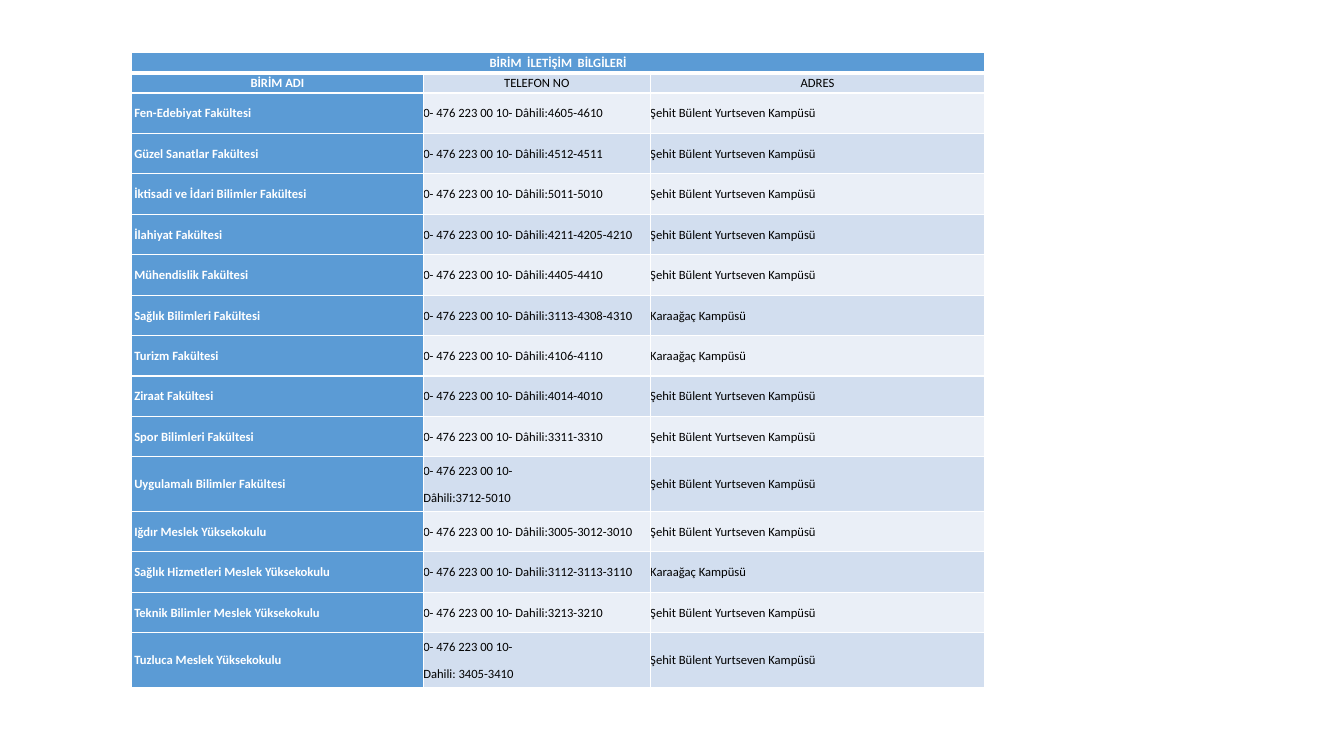
import dataclasses

import lxml.etree
import pptx
import pptx.dml.color
import pptx.enum.text
import pptx.oxml.ns
import pptx.util

Pt = pptx.util.Pt


@dataclasses.dataclass(frozen=True)
class Theme:
    """Colours, font and sizes of the slide."""
    blue: str = "5B9BD5"
    mid: str = "D2DEEF"
    pale: str = "EAEFF7"
    white: str = "FFFFFF"
    black: str = "000000"
    font: str = "Calibri"
    size: float = 9
    thin: float = 1
    thick: float = 3


THEME = Theme()
TITLE = "BİRİM  İLETİŞİM  BİLGİLERİ"
HEADS = ("BİRİM ADI", "TELEFON NO", "ADRES")
PHONE = "0- 476 223 00 10-"
MAIN = "Şehit Bülent Yurtseven Kampüsü"
SIDE = "Karaağaç Kampüsü"
UNITS = (
    ("Fen-Edebiyat Fakültesi", " Dâhili:4605-4610", MAIN),
    ("Güzel Sanatlar Fakültesi", " Dâhili:4512-4511", MAIN),
    ("İktisadi ve İdari Bilimler Fakültesi", " Dâhili:5011-5010", MAIN),
    ("İlahiyat Fakültesi", " Dâhili:4211-4205-4210", MAIN),
    ("Mühendislik Fakültesi", " Dâhili:4405-4410", MAIN),
    ("Sağlık Bilimleri Fakültesi", " Dâhili:3113-4308-4310", SIDE),
    ("Turizm Fakültesi", " Dâhili:4106-4110", SIDE),
    ("Ziraat Fakültesi", " Dâhili:4014-4010", MAIN),
    ("Spor Bilimleri Fakültesi", " Dâhili:3311-3310", MAIN),
    ("Uygulamalı Bilimler Fakültesi", "\nDâhili:3712-5010", MAIN),
    ("Iğdır Meslek Yüksekokulu", " Dâhili:3005-3012-3010", MAIN),
    ("Sağlık Hizmetleri Meslek Yüksekokulu", " Dahili:3112-3113-3110", SIDE),
    ("Teknik Bilimler Meslek Yüksekokulu", " Dahili:3213-3210", MAIN),
    ("Tuzluca Meslek Yüksekokulu", "\nDahili: 3405-3410", MAIN),
)
COLS = (0.342, 0.266, 0.392)
HEAD, ROW, TALL = 14.4, 28.9, 39


def tint(code):
    """Turn a hex code into a colour."""
    return pptx.dml.color.RGBColor.from_string(code)


def edge(cell, row):
    """Draw white borders, thicker between the title and the heads."""
    props = cell._tc.get_or_add_tcPr()
    for side in "LRTB":
        bold = (row, side) in ((0, "B"), (1, "T"))
        width = THEME.thick if bold else THEME.thin
        line = lxml.etree.SubElement(props, pptx.oxml.ns.qn(f"a:ln{side}"), w=str(Pt(width)))
        fill = lxml.etree.SubElement(line, pptx.oxml.ns.qn("a:solidFill"))
        lxml.etree.SubElement(fill, pptx.oxml.ns.qn("a:srgbClr"), val=THEME.white)


def write(cell, text, bold, mid):
    """Fill a cell with one paragraph per line of text."""
    frame = cell.text_frame
    for num, line in enumerate(text.split("\n")):
        para = frame.add_paragraph() if num else frame.paragraphs[0]
        para.alignment = pptx.enum.text.PP_ALIGN.CENTER if mid else pptx.enum.text.PP_ALIGN.LEFT
        para.line_spacing = 1.06
        para.space_after = Pt(7.5)
        run = para.add_run()
        run.text = line
        run.font.name = THEME.font
        run.font.size = Pt(THEME.size)
        run.font.bold = bold
        run.font.color.rgb = tint(THEME.white if bold else THEME.black)


def style(cell, row, col):
    """Set the margins, borders and fill of a cell."""
    cell.margin_left = Pt(2 if row > 1 and col == 0 else 0)
    cell.margin_right = cell.margin_top = cell.margin_bottom = 0
    cell.vertical_anchor = pptx.enum.text.MSO_ANCHOR.MIDDLE
    edge(cell, row)
    band = THEME.mid if row % 2 else THEME.pale
    cell.fill.solid()
    cell.fill.fore_color.rgb = tint(THEME.blue if row == 0 or col == 0 else band)


def contacts(slide, left, top, width, height):
    """Place the table of unit contacts in the given box."""
    rows = [(TITLE, "", ""), HEADS]
    rows += [(name, PHONE + ext, place) for name, ext, place in UNITS]
    table = slide.shapes.add_table(
        len(rows), len(COLS), Pt(left), Pt(top), Pt(width), Pt(height)).table
    table.first_row = table.horz_banding = False
    for col, share in enumerate(COLS):
        table.columns[col].width = Pt(width * share)
    for row, texts in enumerate(rows):
        tall = TALL if "\n" in texts[1] else ROW
        table.rows[row].height = Pt(HEAD if row < 2 else tall)
        for col, text in enumerate(texts):
            cell = table.cell(row, col)
            style(cell, row, col)
            if text:
                write(cell, text, col == 0, row < 2)
    table.cell(0, 0).merge(table.cell(0, len(COLS) - 1))


def main():
    """Build and save the slide."""
    deck = pptx.Presentation()
    deck.slide_width, deck.slide_height = Pt(960), Pt(540)
    slide = deck.slides.add_slide(deck.slide_layouts[6])
    contacts(slide, 93.9, 37.6, 609.5, 453.6)
    deck.save("out.pptx")


if __name__ == "__main__":
    main()
